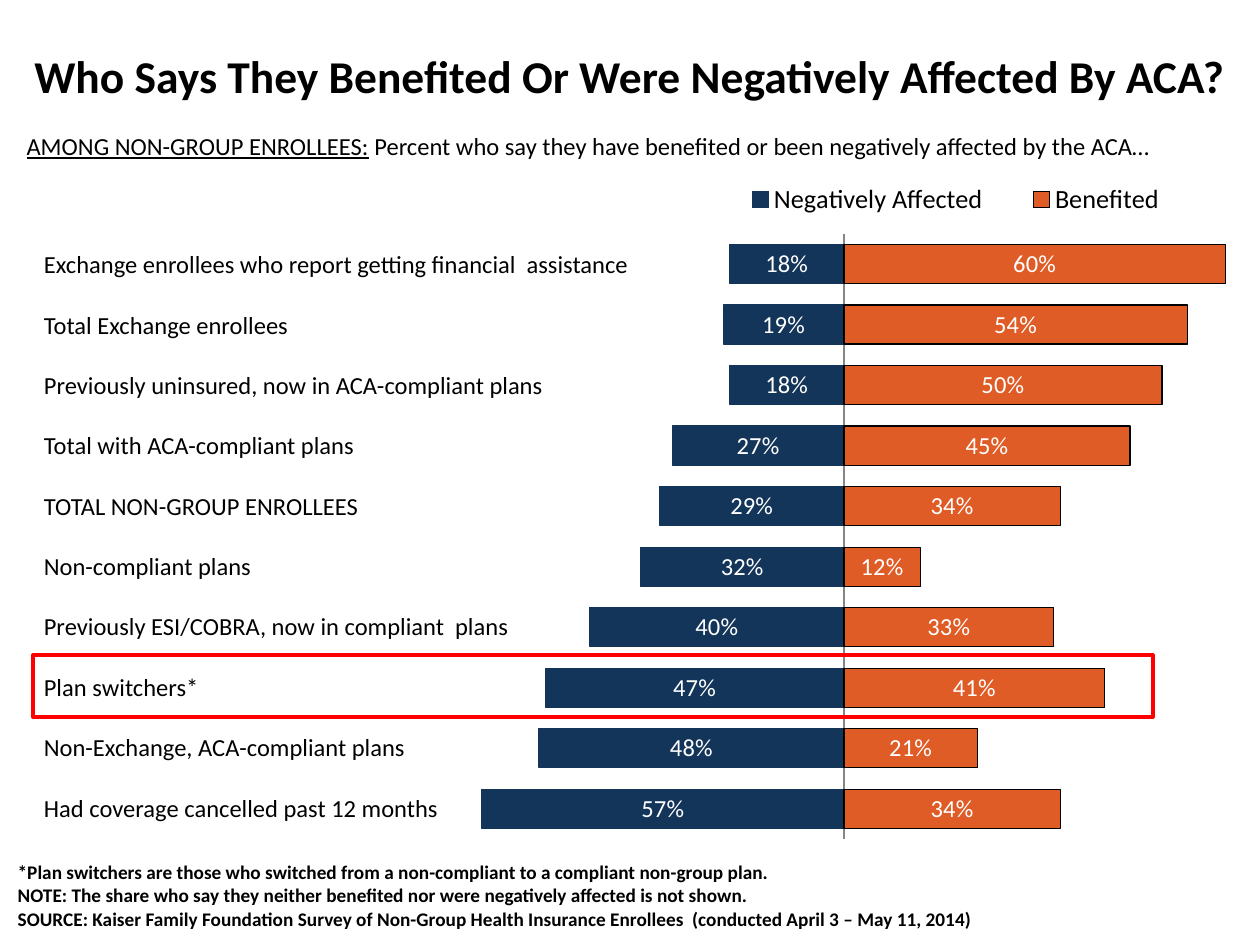
import pptx
import pptx.chart.data
import pptx.dml.color
import pptx.enum.chart
import pptx.enum.shapes
import pptx.enum.text
import pptx.oxml
import pptx.oxml.ns
import pptx.util

RGBColor = pptx.dml.color.RGBColor
BLACK = RGBColor(0x00, 0x00, 0x00)
WHITE = RGBColor(0xFF, 0xFF, 0xFF)
NAVY = RGBColor(0x13, 0x35, 0x59)
ORANGE = RGBColor(0xE0, 0x5C, 0x26)
RED = RGBColor(0xFF, 0x00, 0x00)
GREY = RGBColor(0x86, 0x86, 0x86)

FONT = "Calibri"
COLUMNS, ROWS = 100, 75
PERCENT = "0%;0%"

# Group, label width in columns, share negatively affected, share benefited
GROUPS = [
    ("Exchange enrollees who report getting financial  assistance", 52.9, 0.18, 0.60),
    ("Total Exchange enrollees", 25.6, 0.19, 0.54),
    ("Previously uninsured, now in ACA-compliant plans", 43.5, 0.18, 0.50),
    ("Total with ACA-compliant plans", 30.5, 0.27, 0.45),
    ("TOTAL NON-GROUP ENROLLEES", 40.8, 0.29, 0.34),
    ("Non-compliant plans", 28, 0.32, 0.12),
    ("Previously ESI/COBRA, now in compliant  plans", 51.4, 0.40, 0.33),
    ("Plan switchers*", 43.7, 0.47, 0.41),
    ("Non-Exchange, ACA-compliant plans", 32, 0.48, 0.21),
    ("Had coverage cancelled past 12 months", 37.5, 0.57, 0.34),
]
LABEL_TOP, LABEL_PITCH = 19.3, 4.79
FOOTNOTES = [
    "*Plan switchers are those who switched from a non-compliant to a compliant non-group plan.",
    "NOTE: The share who say they neither benefited nor were negatively affected is not shown.",
    "SOURCE: Kaiser Family Foundation Survey of Non-Group Health Insurance Enrollees"
    "  (conducted April 3 – May 11, 2014)",
]


class SlideBuilder:
    """Places elements on a slide by columns and rows of a grid."""

    def __init__(self, prs):
        self.s = prs.slides.add_slide(prs.slide_layouts[1])
        self.col = prs.slide_width / COLUMNS
        self.row = prs.slide_height / ROWS

    def box(self, x, y, w, h):
        return (round(x * self.col), round(y * self.row),
                round(w * self.col), round(h * self.row))

    def style(self, font, size, color=BLACK, bold=False):
        font.name, font.size, font.bold = FONT, pptx.util.Pt(size), bold
        font.color.rgb = color

    def move(self, sp, *area):
        sp.left, sp.top, sp.width, sp.height = self.box(*area)

    def title(self, text, *area):
        sp = self.s.shapes.title
        self.move(sp, *area)
        tf = sp.text_frame
        tf.text = text
        tf.auto_size = pptx.enum.text.MSO_AUTO_SIZE.NONE
        tf.vertical_anchor = pptx.enum.text.MSO_ANCHOR.MIDDLE
        p = tf.paragraphs[0]
        p.alignment = pptx.enum.text.PP_ALIGN.CENTER
        self.style(p.runs[0].font, 26, bold=True)

    def footnotes(self, lines, *area):
        sp = self.s.placeholders[1]
        self.move(sp, *area)
        tf = sp.text_frame
        tf.text = "\n".join(lines)
        tf.auto_size = pptx.enum.text.MSO_AUTO_SIZE.NONE
        for p in tf.paragraphs:
            pPr = p._p.get_or_add_pPr()
            pPr.set("marL", "0")
            pPr.set("indent", "0")
            p.space_before = pptx.util.Pt(0)
            p.line_spacing = pptx.util.Pt(13.2)
            pPr.append(pptx.oxml.parse_xml(f"<a:buNone {pptx.oxml.ns.nsdecls('a')}/>"))
            self.style(p.runs[0].font, 11, bold=True)

    def text(self, runs, *area, align=pptx.enum.text.PP_ALIGN.LEFT):
        """Add a text box from (text, underlined) pairs."""
        tf = self.s.shapes.add_textbox(*self.box(*area)).text_frame
        tf.word_wrap = True
        p = tf.paragraphs[0]
        p.alignment = align
        for text, underlined in runs:
            r = p.add_run()
            r.text = text
            self.style(r.font, 14)
            r.font.underline = underlined

    def outline(self, *area):
        sp = self.s.shapes.add_shape(pptx.enum.shapes.MSO_SHAPE.RECTANGLE, *self.box(*area))
        sp.shadow.inherit = False
        sp.fill.background()
        sp.line.color.rgb = RED
        sp.line.width = pptx.util.Pt(2)

    def layout(self, part, x, y, w, h, inner=False):
        """Fix a chart part's place, in shares of the chart."""
        target = '<c:layoutTarget val="inner"/>' if inner else ""
        sizes = "".join(f'<c:{k} val="{v}"/>' for k, v in zip("xywh", (x, y, w, h)))
        new = pptx.oxml.parse_xml(
            f"<c:layout {pptx.oxml.ns.nsdecls('c')}><c:manualLayout>{target}"
            f'<c:xMode val="edge"/><c:yMode val="edge"/>{sizes}</c:manualLayout></c:layout>')
        for old in part.findall(pptx.oxml.ns.qn("c:layout")):
            part.remove(old)
        position = part.find(pptx.oxml.ns.qn("c:legendPos"))
        if position is None:
            part.insert(0, new)
        else:
            position.addnext(new)

    def diverging_bars(self, groups, *area):
        data = pptx.chart.data.CategoryChartData(number_format=PERCENT)
        bottom_up = groups[::-1]
        data.categories = [str(i + 1) for i in range(len(groups))]
        data.add_series("Negatively Affected", [-g[2] for g in bottom_up])
        data.add_series("Benefited", [g[3] for g in bottom_up])
        chart = self.s.shapes.add_chart(
            pptx.enum.chart.XL_CHART_TYPE.BAR_STACKED, *self.box(*area), data).chart
        chart.has_title = False
        self.style(chart.font, 14)

        plot = chart.plots[0]
        plot.gap_width, plot.overlap, plot.vary_by_categories = 55, 100, False
        for series, fill, line in zip(plot.series, (NAVY, ORANGE), (NAVY, BLACK)):
            series.invert_if_negative = False
            series.format.fill.solid()
            series.format.fill.fore_color.rgb = fill
            series.format.line.color.rgb = line
            series.format.line.width = pptx.util.Pt(0.75)
            labels = series.data_labels
            labels.show_value = True
            labels.number_format, labels.number_format_is_linked = PERCENT, False
            self.style(labels.font, 14, WHITE)

        category = chart.category_axis
        category.tick_label_position = pptx.enum.chart.XL_TICK_LABEL_POSITION.NONE
        category.major_tick_mark = pptx.enum.chart.XL_TICK_MARK.NONE
        category.format.line.color.rgb = GREY
        value = chart.value_axis
        value.minimum_scale, value.maximum_scale, value.major_unit = -1.1, 1.1, 0.1
        value.has_major_gridlines = value.visible = False

        chart.has_legend = True
        legend = chart.legend
        legend.position = pptx.enum.chart.XL_LEGEND_POSITION.TOP
        legend.include_in_layout = False
        self.style(legend.font, 15)
        self.layout(legend._element, 0.44, 0.02, 0.33, 0.06)
        self.layout(chart._chartSpace.chart.plotArea, 0.06, 0.1, 0.94, 0.88, inner=True)


def main():
    prs = pptx.Presentation()
    prs.slide_width, prs.slide_height = pptx.util.Inches(10), pptx.util.Inches(7.5)
    slide = SlideBuilder(prs)
    slide.diverging_bars(GROUPS, 4.4, 13.1, 118.1, 54.6)
    slide.title("Who Says They Benefited Or Were Negatively Affected By ACA?", 0, 1, 100, 10)
    slide.text([("AMONG NON-GROUP ENROLLEES:", True),
                (" Percent who say they have benefited or been negatively affected by the ACA…",
                 False)],
               0, 9.9, 93.4, 3.4, align=pptx.enum.text.PP_ALIGN.CENTER)
    slide.outline(2.6, 52, 88.9, 4.9)
    for i, (name, width, *_) in enumerate(GROUPS):
        slide.text([(name, False)], 2.5, LABEL_TOP + i * LABEL_PITCH, width, 3.4)
    slide.footnotes(FOOTNOTES, 0.4, 67.8, 91, 7.2)
    prs.save("out.pptx")


if __name__ == "__main__":
    main()
